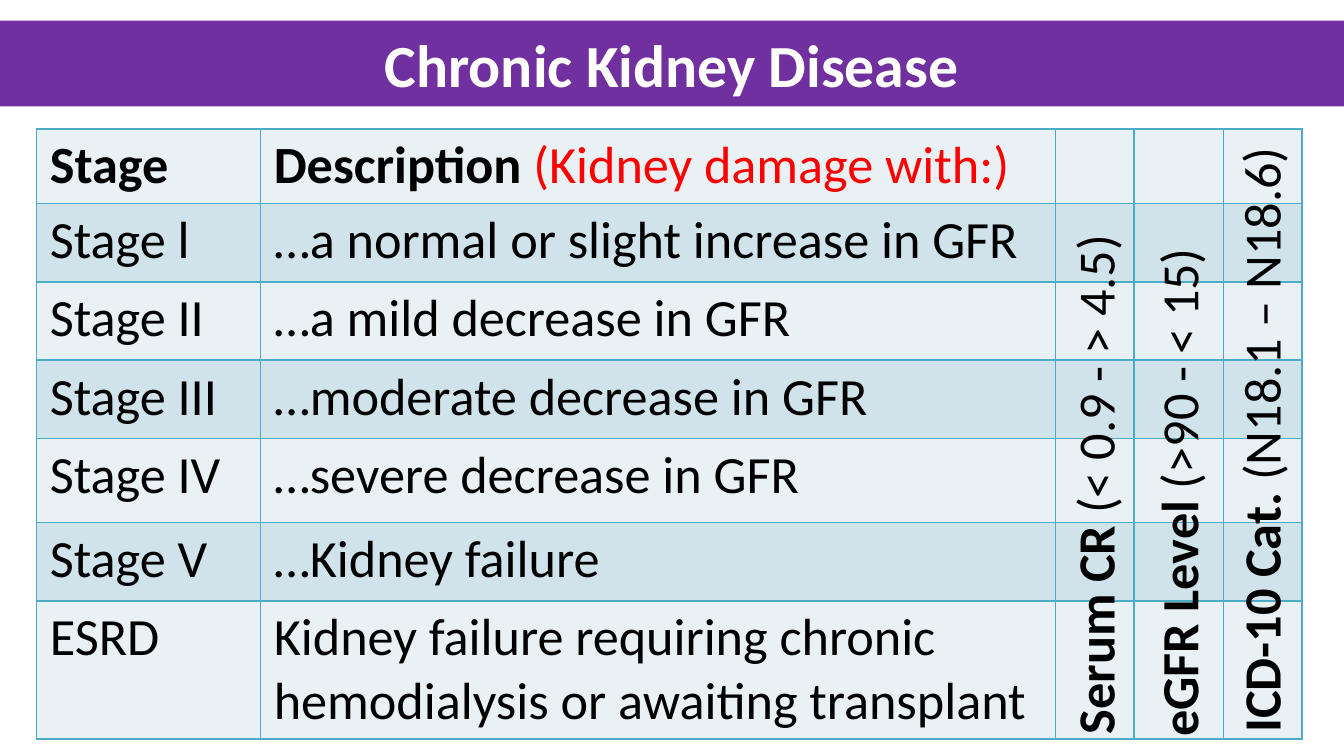
import lxml.etree
import pptx
import pptx.dml.color
import pptx.enum.text
import pptx.oxml.ns
import pptx.util

Pt = pptx.util.Pt
FONT = "Calibri"
COLORS = {
    "purple": "7030A0",
    "white": "FFFFFF",
    "black": "000000",
    "red": "FF0000",
    "border": "4BACC6",
    "light": "E9F1F5",
    "dark": "D0E3EA",
}

# Table content: stage and description, each a list of (text, color, bold)
HEADER = [
    [("Stage", "black", True)],
    [("Description ", "black", True), ("(Kidney damage with:)", "red", False)],
]
STAGES = [
    ("Stage l", "…a normal or slight increase in GFR"),
    ("Stage II", "…a mild decrease in GFR"),
    ("Stage III", "…moderate decrease in GFR"),
    ("Stage IV", "…severe decrease in GFR"),
    ("Stage V", "…Kidney failure"),
    ("ESRD", "Kidney failure requiring chronic hemodialysis or awaiting transplant"),
]
COLUMN_WIDTHS = [120, 426, 42, 48, 42]
ROW_HEIGHTS = [40, 42, 42, 42, 45, 42, 74]

# Upright headings: bold label, range, center x, bottom, length
UPRIGHT_HEADINGS = [
    ("ICD-10 Cat. ", "(N18.1 – N18.6)", 675, 399.6, 330.5),
    ("eGFR Level ", "(>90 - < 15)", 631, 401.8, 280),
    ("Serum CR ", "(< 0.9 - > 4.5)", 586, 400.5, 283.5),
]


def rgb(name):
    return pptx.dml.color.RGBColor.from_string(COLORS[name])


def add_span(para, text, color="black", bold=False, size=28):
    span = para.add_run()
    span.text = text
    span.font.name = FONT
    span.font.size = Pt(size)
    span.font.bold = bold
    span.font.color.rgb = rgb(color)


def fill_title(page):
    box = page.shapes.title
    box.left, box.top, box.width, box.height = Pt(0), Pt(11), Pt(720), Pt(46)
    box.fill.solid()
    box.fill.fore_color.rgb = rgb("purple")
    frame = box.text_frame
    frame.auto_size = pptx.enum.text.MSO_AUTO_SIZE.NONE
    frame.vertical_anchor = pptx.enum.text.MSO_ANCHOR.MIDDLE
    para = frame.paragraphs[0]
    para.alignment = pptx.enum.text.PP_ALIGN.CENTER
    add_span(para, "Chronic Kidney Disease", "white", True, 32)


def add_borders(cell):
    properties = cell._tc.get_or_add_tcPr()
    qn = pptx.oxml.ns.qn
    for side in ("lnL", "lnR", "lnT", "lnB"):
        line = lxml.etree.SubElement(properties, qn("a:" + side), w=str(Pt(1)))
        fill = lxml.etree.SubElement(line, qn("a:solidFill"))
        lxml.etree.SubElement(fill, qn("a:srgbClr"), val=COLORS["border"])


def style_cell(cell, fill):
    add_borders(cell)
    cell.fill.solid()
    cell.fill.fore_color.rgb = rgb(fill)
    cell.margin_left = cell.margin_right = Pt(7.2)
    cell.margin_top = cell.margin_bottom = Pt(2.8)


def add_stage_table(page):
    rows = [HEADER] + [[[(text, "black", False)] for text in stage] for stage in STAGES]
    table = page.shapes.add_table(
        len(rows), len(COLUMN_WIDTHS), Pt(19.5), Pt(69),
        Pt(sum(COLUMN_WIDTHS)), Pt(sum(ROW_HEIGHTS)),
    ).table
    table.first_row = table.horz_banding = False
    for column, width in zip(table.columns, COLUMN_WIDTHS):
        column.width = Pt(width)
    for index, (row, height, texts) in enumerate(zip(table.rows, ROW_HEIGHTS, rows)):
        row.height = Pt(height)
        for cell in row.cells:
            style_cell(cell, "dark" if index % 2 else "light")
        for cell, spans in zip(row.cells, texts):
            for text, color, bold in spans:
                add_span(cell.text_frame.paragraphs[0], text, color, bold)


def add_upright_heading(page, label, limits, center, bottom, length, height=41):
    # The box is placed unrotated, then turned about its center
    middle = bottom - length / 2
    box = page.shapes.add_textbox(
        Pt(center - length / 2), Pt(middle - height / 2), Pt(length), Pt(height)
    )
    box.rotation = 270
    box.text_frame.word_wrap = False
    box.text_frame.auto_size = pptx.enum.text.MSO_AUTO_SIZE.SHAPE_TO_FIT_TEXT
    para = box.text_frame.paragraphs[0]
    add_span(para, label, bold=True)
    add_span(para, limits)


def main():
    deck = pptx.Presentation()
    deck.slide_width, deck.slide_height = Pt(720), Pt(405)
    page = deck.slides.add_slide(deck.slide_layouts[5])
    fill_title(page)
    add_stage_table(page)
    for heading in UPRIGHT_HEADINGS:
        add_upright_heading(page, *heading)
    deck.save("out.pptx")


if __name__ == "__main__":
    main()
